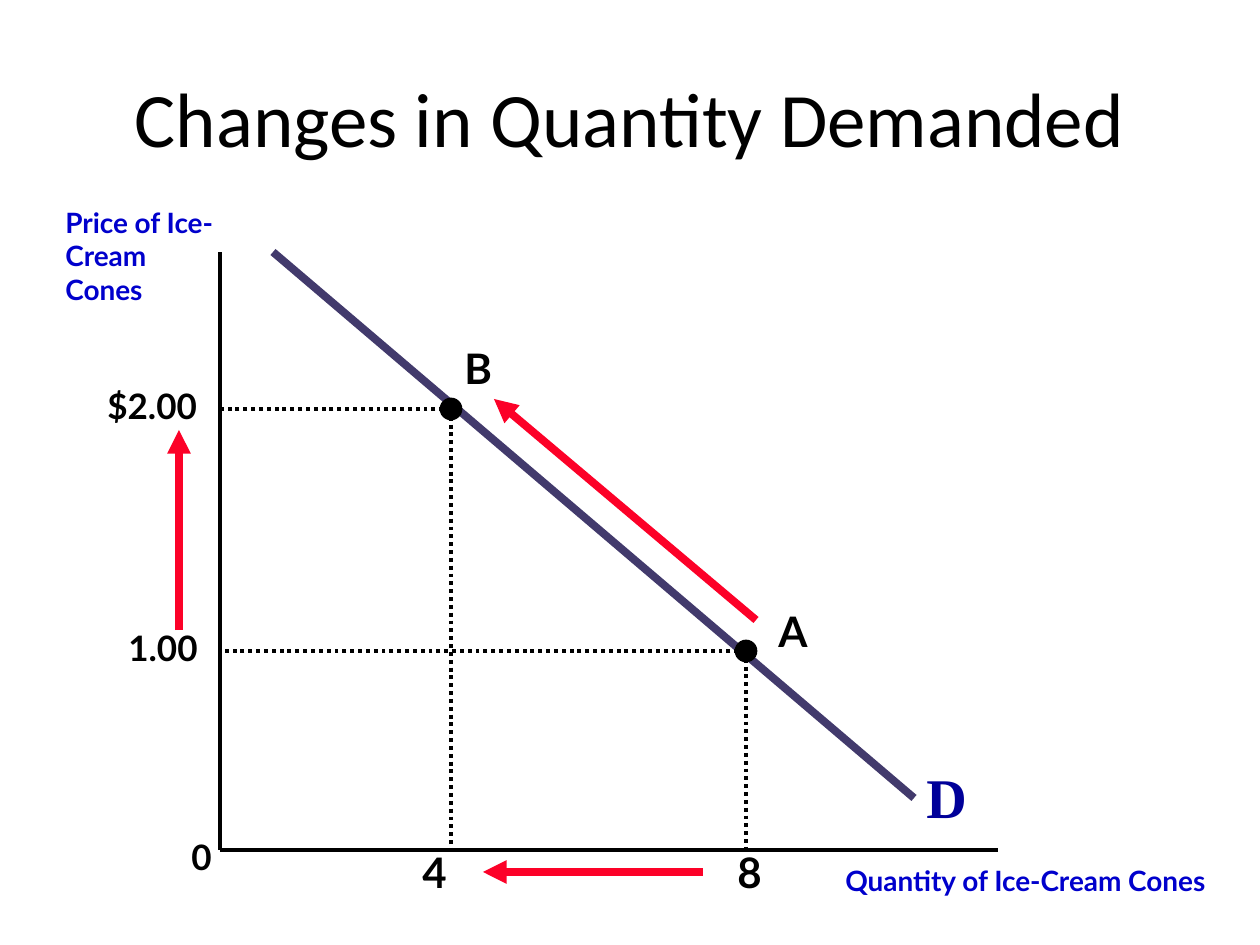
from lxml import etree
from pptx import Presentation
from pptx.dml.color import RGBColor
from pptx.enum.dml import MSO_LINE
from pptx.enum.shapes import MSO_CONNECTOR, MSO_SHAPE
from pptx.enum.text import MSO_ANCHOR, MSO_AUTO_SIZE, PP_ALIGN
from pptx.oxml.ns import qn
from pptx.util import Emu, Pt

STRAIGHT = MSO_CONNECTOR.STRAIGHT
OVAL = MSO_SHAPE.OVAL
DOTS = MSO_LINE.ROUND_DOT  # written as sysDot
GROW = MSO_AUTO_SIZE.SHAPE_TO_FIT_TEXT
MIDDLE = MSO_ANCHOR.MIDDLE
LEFT, CENTER, RIGHT = PP_ALIGN.LEFT, PP_ALIGN.CENTER, PP_ALIGN.RIGHT

BLACK = RGBColor(0x00, 0x00, 0x00)
PURPLE = RGBColor(0x42, 0x3A, 0x6C)
RED = RGBColor(0xFC, 0x01, 0x28)
BLUE = RGBColor(0x00, 0x00, 0xCC)
NAVY = RGBColor(0x00, 0x00, 0x99)

SCALE = 914400 / 126  # EMU per px

# Plot frame and the two points on the demand curve
AXIS_X, AXIS_Y = 220, 850
TOP, END = 252, 998
B = (451, 409)
A = (746, 651)
DOT = 21


def px(n):
    return Emu(round(n * SCALE))


def style(para, size, color, font, bold, align):
    para.alignment = align
    para.font.size = Pt(size)
    para.font.name = font
    para.font.bold = bold
    para.font.color.rgb = color


def text(slide, words, x, y, w, h, size=20, color=BLACK, font="Lato",
         bold=True, align=LEFT):
    box = slide.shapes.add_textbox(px(x), px(y), px(w), px(h))
    frame = box.text_frame
    frame.word_wrap = True
    frame.auto_size = GROW
    para = frame.paragraphs[0]
    para.text = words
    style(para, size, color, font, bold, align)


def line(slide, start, end, color=BLACK, width=2.25, dash=None, arrow=False):
    rule = slide.shapes.add_connector(
        STRAIGHT, px(start[0]), px(start[1]), px(end[0]), px(end[1]))
    rule.line.color.rgb = color
    rule.line.width = Pt(width)
    if dash:
        rule.line.dash_style = dash
    if arrow:
        tip = etree.SubElement(rule.line._get_or_add_ln(), qn("a:tailEnd"))
        tip.set("type", "triangle")
    etree.SubElement(rule._element.spPr, qn("a:effectLst"))


def dot(slide, point):
    x, y = point
    mark = slide.shapes.add_shape(
        OVAL, px(x - DOT / 2), px(y - DOT / 2), px(DOT), px(DOT))
    mark.shadow.inherit = False
    mark.fill.solid()
    mark.fill.fore_color.rgb = BLACK
    mark.line.color.rgb = BLACK
    mark.line.width = Pt(1)


def title(slide, words):
    head = slide.shapes.title
    head.left, head.top, head.width, head.height = map(px, (63, 38, 1134, 158))
    frame = head.text_frame
    frame.vertical_anchor = MIDDLE
    frame.text = words
    style(frame.paragraphs[0], 44, BLACK, "Calibri", False, CENTER)


def main():
    deck = Presentation()
    deck.slide_width, deck.slide_height = px(1260), px(945)
    slide = deck.slides.add_slide(deck.slide_layouts[5])
    title(slide, "Changes in Quantity Demanded")

    # Axes and demand curve
    line(slide, (AXIS_X, TOP), (AXIS_X, AXIS_Y))
    line(slide, (AXIS_X, AXIS_Y), (END, AXIS_Y))
    line(slide, (273, TOP), (914, 798), PURPLE, 4.5)

    # Guides from each point to both axes
    for x, y in (A, B):
        line(slide, (x, y), (AXIS_X, y), dash=DOTS)
        line(slide, (x, y), (x, AXIS_Y), dash=DOTS)
        dot(slide, (x, y))

    # Moves along the price axis, the curve and the quantity axis
    for start, end in (((179, 630), (179, 430)),
                       ((756, 620), (494, 399)),
                       ((703, 872), (483, 872))):
        line(slide, start, end, RED, 4.5, arrow=True)

    # Axis names
    text(slide, "Price of Ice-Cream \nCones", 53, 199, 231, 113,
         size=16, color=BLUE)
    text(slide, "Quantity of Ice-Cream Cones", 735, 857, 483, 47,
         size=16, color=BLUE, align=RIGHT)

    # Values on the axes
    text(slide, "0", 179, 829, 105, 54)
    text(slide, "1.00", 116, 620, 126, 54)
    text(slide, "$2.00", 95, 378, 126, 54)
    text(slide, "4", 410, 840, 95, 63, size=24)
    text(slide, "8", 725, 840, 95, 63, size=24)

    # Names of the points and the curve
    text(slide, "A", 766, 599, 42, 63, size=24)
    text(slide, "B", 452, 336, 73, 63, size=24)
    text(slide, "D", 914, 756, 105, 79, size=32, color=NAVY,
         font="Times New Roman")

    deck.save("out.pptx")


if __name__ == "__main__":
    main()
